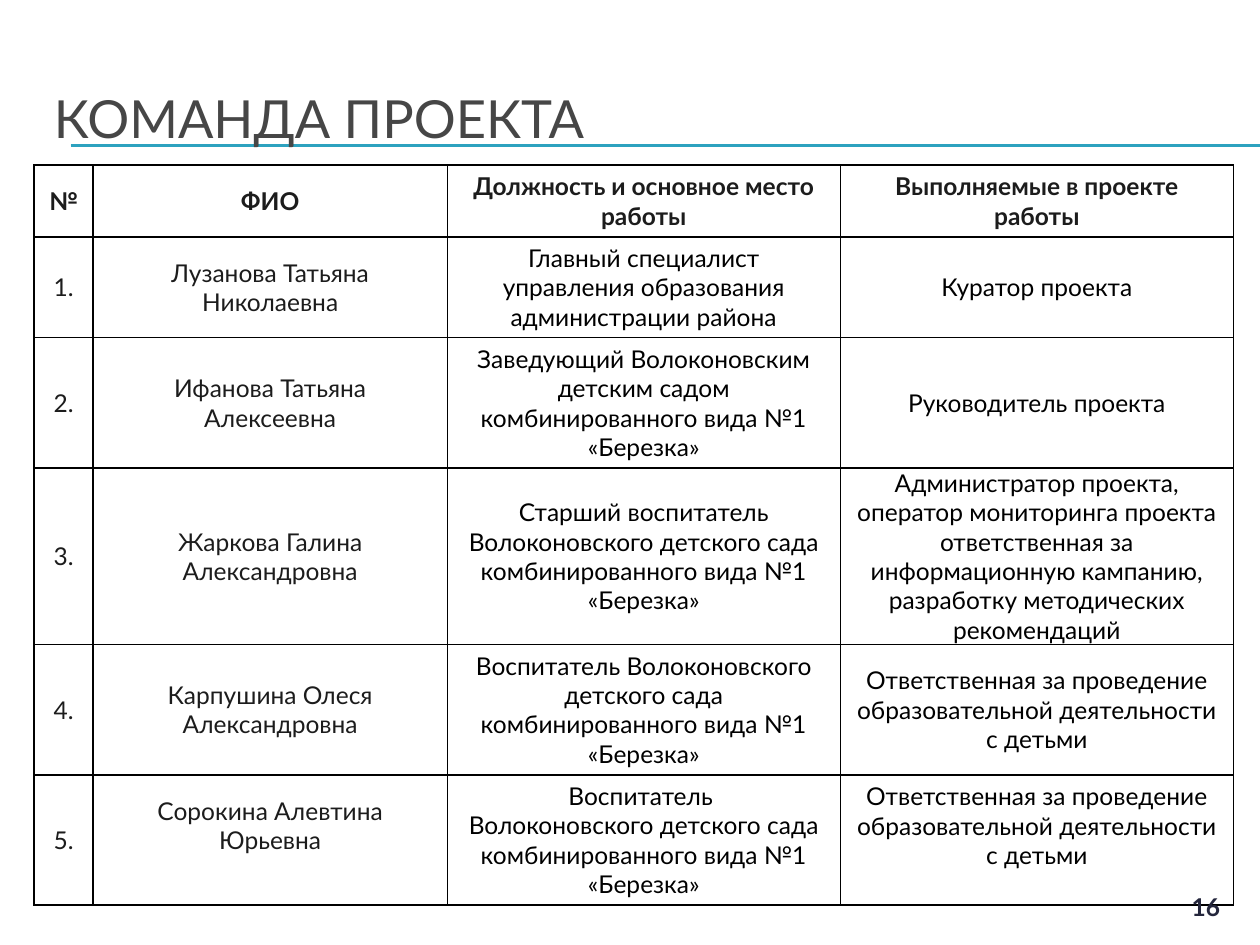
import dataclasses

import lxml.etree
import pptx
import pptx.dml.color
import pptx.enum.shapes
import pptx.enum.text
import pptx.oxml.ns
import pptx.util

ANCHOR = pptx.enum.text.MSO_ANCHOR
ALIGN = pptx.enum.text.PP_ALIGN


@dataclasses.dataclass(frozen=True)
class Theme:
    font: str = "Lato"
    title_color: str = "464646"
    label_color: str = "1C1C1C"
    body_color: str = "000000"
    number_color: str = "24263C"
    rule_color: str = "2DA2BF"
    border_color: str = "000000"
    title_size: float = 30
    text_size: float = 14
    rule_width: float = 0.75
    border_width: float = 1


THEME = Theme()
SLIDE_WIDTH, SLIDE_HEIGHT = 10, 7.5
COLUMN_WIDTHS = [0.47, 2.81, 3.12, 3.12]
ROW_HEIGHTS = [0.57, 0.8, 1.03, 1.4, 1.03, 1.03]
LABEL_INSETS = (0.1, 0.05, 0.1, 0.05)
DUTY_INSETS = (0.07, 0, 0.07, 0)
LINE_HEIGHT = 0.23

HEADINGS = ["№", "ФИО", "Должность и основное место работы", "Выполняемые в проекте работы"]
CHILD_DUTY = "Ответственная за проведение образовательной деятельности с детьми"
# Name, post and duties; a line break starts a new paragraph.
TEAM = [
    ("Лузанова Татьяна Николаевна",
     "Главный специалист управления образования администрации района",
     "Куратор проекта"),
    ("Ифанова Татьяна Алексеевна",
     "Заведующий Волоконовским детским садом комбинированного вида №1 «Березка»",
     "Руководитель проекта"),
    ("Жаркова Галина Александровна",
     "Старший воспитатель Волоконовского детского сада комбинированного вида №1 «Березка»",
     "Администратор проекта, оператор мониторинга проекта\n"
     "ответственная за информационную кампанию, разработку методических рекомендаций"),
    ("Карпушина Олеся Александровна",
     "Воспитатель Волоконовского детского сада комбинированного вида №1 «Березка»",
     CHILD_DUTY),
    ("Сорокина Алевтина Юрьевна",
     "Воспитатель \nВолоконовского детского сада комбинированного вида №1 «Березка»",
     CHILD_DUTY),
]


def rgb(color):
    return pptx.dml.color.RGBColor.from_string(color)


def write_text(text_frame, text, size, color, bold=False, align=ALIGN.CENTER):
    text_frame.word_wrap = True
    for index, line in enumerate(text.split("\n")):
        paragraph = text_frame.paragraphs[0] if index == 0 else text_frame.add_paragraph()
        paragraph.alignment = align
        run = paragraph.add_run()
        run.text = line
        run.font.name = THEME.font
        run.font.size = pptx.util.Pt(size)
        run.font.bold = bold
        run.font.color.rgb = rgb(color)


def add_text(slide, box, text, size, color, anchor=ANCHOR.TOP, **style):
    shape = slide.shapes.add_textbox(*map(pptx.util.Inches, box))
    shape.text_frame.vertical_anchor = anchor
    write_text(shape.text_frame, text, size, color, **style)


def add_rule(slide, left, top):
    """Draw a horizontal line from left to the slide's right edge."""
    connector = slide.shapes.add_connector(
        pptx.enum.shapes.MSO_CONNECTOR.STRAIGHT,
        *map(pptx.util.Inches, (left, top, SLIDE_WIDTH, top)))
    connector.line.color.rgb = rgb(THEME.rule_color)
    connector.line.width = pptx.util.Pt(THEME.rule_width)
    lxml.etree.SubElement(connector._element.spPr, pptx.oxml.ns.qn("a:effectLst"))


def set_borders(cell):
    """Border lines must stand before the fill in the cell properties."""
    qn = pptx.oxml.ns.qn
    properties = cell._tc.get_or_add_tcPr()
    for index, side in enumerate(("lnL", "lnR", "lnT", "lnB")):
        line = lxml.etree.Element(qn("a:" + side), w=str(pptx.util.Pt(THEME.border_width)))
        fill = lxml.etree.SubElement(line, qn("a:solidFill"))
        lxml.etree.SubElement(fill, qn("a:srgbClr"), val=THEME.border_color)
        properties.insert(index, line)


def fill_cell(cell, text, color, insets, bold=False):
    cell.fill.background()
    set_borders(cell)
    cell.vertical_anchor = ANCHOR.MIDDLE
    (cell.margin_left, cell.margin_top,
     cell.margin_right, cell.margin_bottom) = map(pptx.util.Inches, insets)
    write_text(cell.text_frame, text, THEME.text_size, color, bold)


def add_team_table(slide, left, top):
    size = (left, top, sum(COLUMN_WIDTHS), sum(ROW_HEIGHTS))
    table = slide.shapes.add_table(
        len(ROW_HEIGHTS), len(COLUMN_WIDTHS), *map(pptx.util.Inches, size)).table
    table.horz_banding = False
    for column, width in zip(table.columns, COLUMN_WIDTHS):
        column.width = pptx.util.Inches(width)
    for row, height in zip(table.rows, ROW_HEIGHTS):
        row.height = pptx.util.Inches(height)

    for column, heading in enumerate(HEADINGS):
        fill_cell(table.cell(0, column), heading, THEME.label_color, LABEL_INSETS, bold=True)
    for row, member in enumerate(TEAM, start=1):
        for column, text in enumerate((f"{row}.", *member)):
            color = THEME.label_color if column < 2 else THEME.body_color
            insets = DUTY_INSETS if column == 3 else LABEL_INSETS
            fill_cell(table.cell(row, column), text, color, insets)

    # The name and duty of the last member sit half a line above the middle.
    for column in (1, 3):
        cell = table.cell(len(TEAM), column)
        cell.margin_bottom += pptx.util.Inches(LINE_HEIGHT)


def main():
    presentation = pptx.Presentation()
    presentation.slide_width = pptx.util.Inches(SLIDE_WIDTH)
    presentation.slide_height = pptx.util.Inches(SLIDE_HEIGHT)
    slide = presentation.slides.add_slide(presentation.slide_layouts[6])

    for top in (1.15, 1.16):
        add_rule(slide, 0.56, top)
    add_text(slide, (0.33, 0.47, 9.5, 0.92), "КОМАНДА ПРОЕКТА", THEME.title_size,
             THEME.title_color, anchor=ANCHOR.MIDDLE, align=ALIGN.LEFT)
    add_team_table(slide, 0.27, 1.31)
    add_text(slide, (9.3, 7.03, 0.54, 0.47), "16", THEME.text_size,
             THEME.number_color, bold=True)
    presentation.save("out.pptx")


if __name__ == "__main__":
    main()
